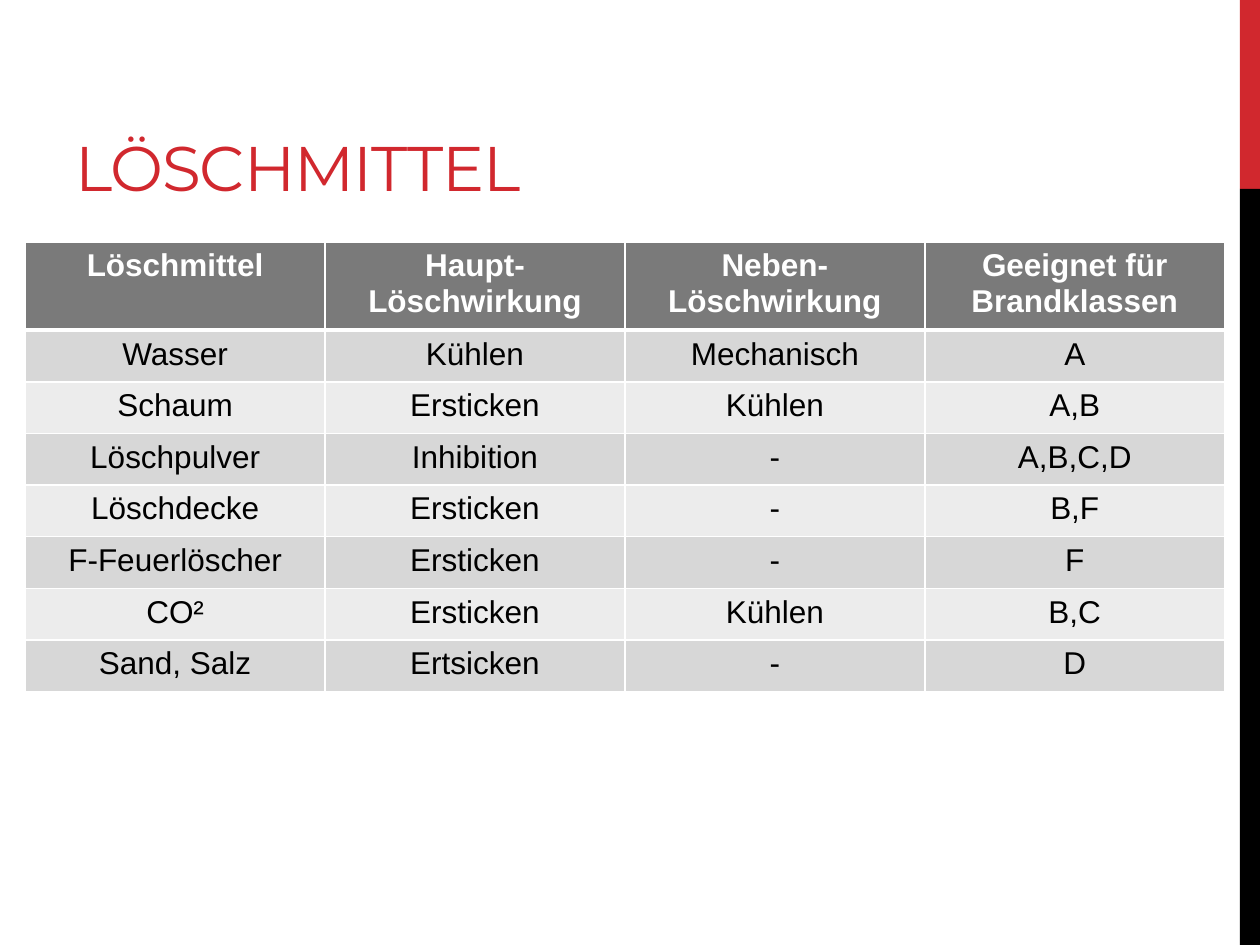
import pptx
import pptx.dml.color
import pptx.enum.shapes
import pptx.enum.text
import pptx.oxml.ns
import pptx.util
from lxml import etree

Inches = pptx.util.Inches
Pt = pptx.util.Pt

COLORS = {
    "red": "D1282E",
    "black": "000000",
    "white": "FFFFFF",
    "header": "7A7A7A",
    "odd": "D7D7D7",
    "even": "ECECEC",
}
ROWS = [
    ("Löschmittel", "Haupt-Löschwirkung", "Neben-Löschwirkung", "Geeignet für Brandklassen"),
    ("Wasser", "Kühlen", "Mechanisch", "A"),
    ("Schaum", "Ersticken", "Kühlen", "A,B"),
    ("Löschpulver", "Inhibition", "-", "A,B,C,D"),
    ("Löschdecke", "Ersticken", "-", "B,F"),
    ("F-Feuerlöscher", "Ersticken", "-", "F"),
    ("CO²", "Ersticken", "Kühlen", "B,C"),
    ("Sand, Salz", "Ertsicken", "-", "D"),
]
HEADER_HEIGHT, ROW_HEIGHT, COLUMN_WIDTH = 0.65, 0.41, 2.38


def rgb(name):
    return pptx.dml.color.RGBColor.from_string(COLORS[name])


def add_border(cell, side, points):
    """Draw a white border on one side (L, R, T or B); call before filling the cell."""
    properties = cell._tc.get_or_add_tcPr()
    line = etree.SubElement(properties, pptx.oxml.ns.qn(f"a:ln{side}"), w=str(Pt(points)))
    fill = etree.SubElement(line, pptx.oxml.ns.qn("a:solidFill"))
    etree.SubElement(fill, pptx.oxml.ns.qn("a:srgbClr"), val=COLORS["white"])


presentation = pptx.Presentation()
presentation.slide_width = Inches(10)
presentation.slide_height = Inches(7.5)
slide = presentation.slides.add_slide(presentation.slide_layouts[6])

# Side stripe
for top, height, color in [(0, 1.5, "red"), (1.5, 6, "black")]:
    stripe = slide.shapes.add_shape(
        pptx.enum.shapes.MSO_SHAPE.RECTANGLE,
        Inches(9.84), Inches(top), Inches(0.16), Inches(height))
    stripe.shadow.inherit = False
    stripe.fill.solid()
    stripe.fill.fore_color.rgb = rgb(color)
    stripe.line.fill.background()

# Title
title = slide.shapes.add_textbox(Inches(0.5), Inches(0.17), Inches(6.33), Inches(1.5)).text_frame
title.word_wrap = True
title.vertical_anchor = pptx.enum.text.MSO_ANCHOR.BOTTOM
heading = title.paragraphs[0]
heading.text = "LÖSCHMITTEL"
heading.font.name = "Montserrat"
heading.font.size = Pt(36)
heading.font.color.rgb = rgb("red")
heading.runs[0].font._element.set("spc", "-60")

# Table of extinguishing agents
agents = slide.shapes.add_table(
    len(ROWS), len(ROWS[0]), Inches(0.2), Inches(1.92),
    Inches(COLUMN_WIDTH * len(ROWS[0])),
    Inches(HEADER_HEIGHT + ROW_HEIGHT * (len(ROWS) - 1))).table
for column in agents.columns:
    column.width = Inches(COLUMN_WIDTH)

for r, entries in enumerate(ROWS):
    is_header = r == 0
    agents.rows[r].height = Inches(HEADER_HEIGHT if is_header else ROW_HEIGHT)
    background = "header" if is_header else "odd" if r % 2 else "even"
    for c, entry in enumerate(entries):
        cell = agents.cell(r, c)
        add_border(cell, "L", 1)
        add_border(cell, "R", 1)
        add_border(cell, "T", 3 if r == 1 else 1)
        add_border(cell, "B", 3 if is_header else 1)
        cell.fill.solid()
        cell.fill.fore_color.rgb = rgb(background)
        cell.text = entry
        label = cell.text_frame.paragraphs[0]
        label.alignment = pptx.enum.text.PP_ALIGN.CENTER
        label.font.name = "Arial"
        label.font.size = Pt(18)
        label.font.bold = is_header
        label.font.color.rgb = rgb("white" if is_header else "black")

presentation.save("out.pptx")
